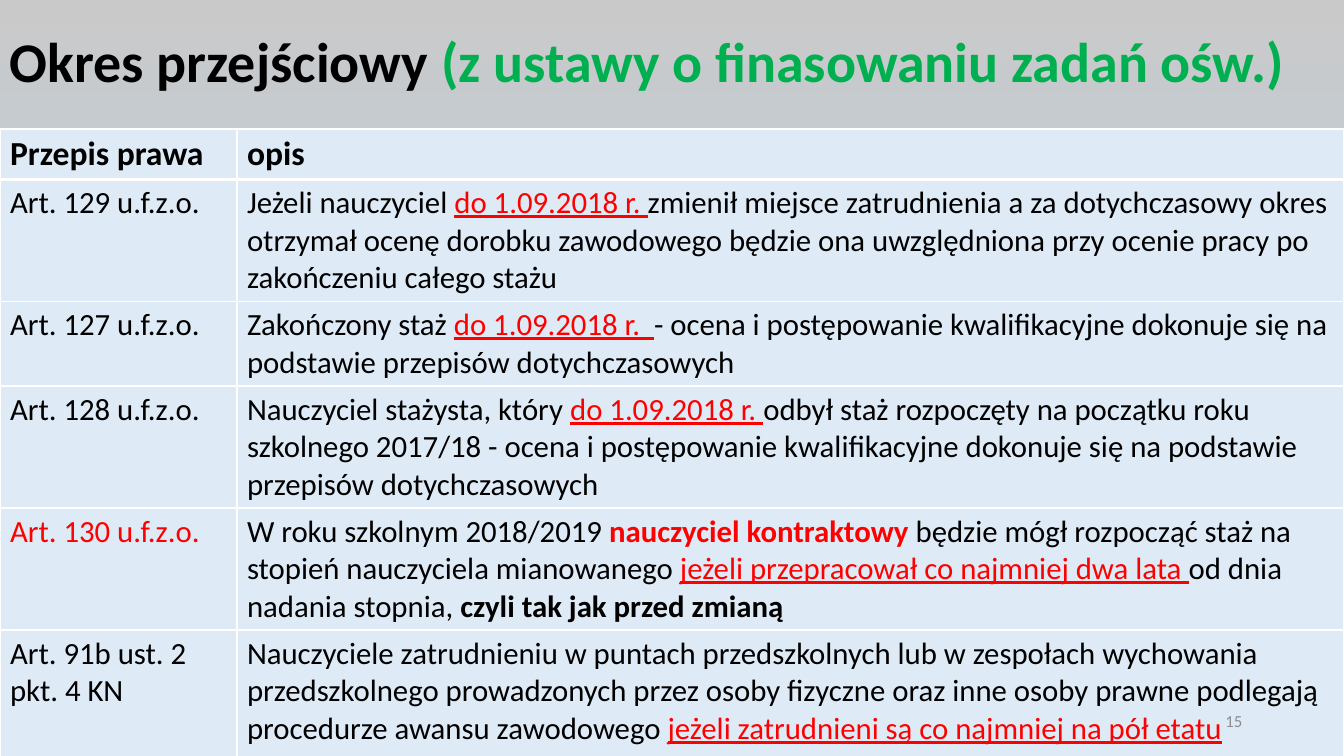
from lxml.etree import SubElement
from pptx import Presentation
from pptx.dml.color import RGBColor
from pptx.enum.text import MSO_ANCHOR, PP_ALIGN
from pptx.oxml.ns import qn
from pptx.util import Inches, Pt

BLACK = RGBColor(0x00, 0x00, 0x00)
WHITE = RGBColor(0xFF, 0xFF, 0xFF)
RED = RGBColor(0xFF, 0x00, 0x00)
GREEN = RGBColor(0x00, 0xB0, 0x50)
GRAY = RGBColor(0x8C, 0x8C, 0x8C)
PALE_BLUE = RGBColor(0xDE, 0xEB, 0xF7)
BACKGROUND_STOPS = [
    (0, RGBColor(0xC9, 0xC9, 0xC9)),
    (74, RGBColor(0xB5, 0xD2, 0xEC)),
    (83, RGBColor(0xB5, 0xD2, 0xEC)),
    (100, RGBColor(0xCE, 0xE1, 0xF2)),
]

FONT = "Calibri"
SLIDE_WIDTH, SLIDE_HEIGHT = 13.33, 7.5
TITLE_HEIGHT = 1.28
COLUMN_WIDTHS = [2.35, 10.98]
ROW_HEIGHTS = [0.5, 1.21, 0.84, 1.21, 1.21, 1.46]

DEADLINE = {"color": RED, "underline": True}
HEADER = ["Przepis prawa", "opis"]
PROVISIONS = [
    (
        [("Art. 129 u.f.z.o.", {})],
        [
            ("Jeżeli nauczyciel ", {}),
            ("do 1.09.2018 r. ", DEADLINE),
            ("zmienił miejsce zatrudnienia a za dotychczasowy okres otrzymał ocenę dorobku "
             "zawodowego będzie ona uwzględniona przy ocenie pracy po zakończeniu całego stażu", {}),
        ],
    ),
    (
        [("Art. 127 u.f.z.o.", {})],
        [
            ("Zakończony staż ", {}),
            ("do 1.09.2018 r.  ", DEADLINE),
            ("- ocena i postępowanie kwalifikacyjne dokonuje się na podstawie przepisów "
             "dotychczasowych", {}),
        ],
    ),
    (
        [("Art. 128 u.f.z.o.", {})],
        [
            ("Nauczyciel stażysta, który ", {}),
            ("do 1.09.2018 r. ", DEADLINE),
            ("odbył staż rozpoczęty na początku roku szkolnego 2017/18 - ocena i postępowanie "
             "kwalifikacyjne dokonuje się na podstawie przepisów dotychczasowych", {}),
        ],
    ),
    (
        [("Art. 130 u.f.z.o.", {"color": RED})],
        [
            ("W roku szkolnym 2018/2019 ", {}),
            ("nauczyciel kontraktowy ", {"color": RED, "bold": True}),
            ("będzie mógł rozpocząć staż na stopień nauczyciela mianowanego ", {}),
            ("jeżeli przepracował co najmniej dwa lata ", DEADLINE),
            ("od dnia nadania stopnia, ", {}),
            ("czyli tak jak przed zmianą", {"bold": True}),
        ],
    ),
    (
        [("Art. 91b ust. 2 pkt. 4 KN", {})],
        [
            ("Nauczyciele zatrudnieniu w puntach przedszkolnych lub w zespołach wychowania "
             "przedszkolnego prowadzonych przez osoby fizyczne oraz inne osoby prawne podlegają "
             "procedurze awansu zawodowego ", {}),
            ("jeżeli zatrudnieni są co najmniej na pół etatu", DEADLINE),
        ],
    ),
]


def add_run(paragraph, text, size=22, color=BLACK, bold=False, underline=False):
    run = paragraph.add_run()
    run.text = text
    font = run.font
    font.name = FONT
    font.size = Pt(size)
    font.bold = bold
    font.underline = underline
    font.color.rgb = color


def set_background(slide):
    fill = slide.background.fill
    fill.gradient()
    fill.gradient_angle = 270
    stop_list = next(slide.element.iter(qn("a:gsLst")))
    for stop in list(stop_list):
        stop_list.remove(stop)
    for position, color in BACKGROUND_STOPS:
        stop = SubElement(stop_list, qn("a:gs"), pos=str(position * 1000))
        SubElement(stop, qn("a:srgbClr"), val=str(color))


def add_text_box(slide, left, top, width, height, anchor=MSO_ANCHOR.MIDDLE):
    box = slide.shapes.add_textbox(Inches(left), Inches(top), Inches(width), Inches(height))
    frame = box.text_frame
    frame.word_wrap = True
    frame.vertical_anchor = anchor
    return frame.paragraphs[0]


def add_title(slide):
    paragraph = add_text_box(slide, 0, 0, SLIDE_WIDTH, TITLE_HEIGHT)
    paragraph.line_spacing = 0.9
    add_run(paragraph, "Okres przejściowy ", size=40, bold=True)
    add_run(paragraph, "(z ustawy o finasowaniu zadań ośw.)", size=40, bold=True, color=GREEN)


def add_slide_number(slide):
    paragraph = add_text_box(slide, 9.42, 6.95, 3, 0.4)
    paragraph.alignment = PP_ALIGN.RIGHT
    add_run(paragraph, "15", size=12, color=GRAY)


def style_cell(cell, top_width, bottom_width):
    properties = cell._tc.get_or_add_tcPr()
    widths = {"a:lnL": 1, "a:lnR": 1, "a:lnT": top_width, "a:lnB": bottom_width}
    for tag, width in widths.items():
        line = SubElement(properties, qn(tag), w=str(Pt(width)))
        fill = SubElement(line, qn("a:solidFill"))
        SubElement(fill, qn("a:srgbClr"), val=str(WHITE))
    cell.fill.solid()
    cell.fill.fore_color.rgb = PALE_BLUE


def add_provisions_table(slide):
    header = [[(label, {"size": 24, "bold": True})] for label in HEADER]
    rows = [header, *PROVISIONS]
    table = slide.shapes.add_table(
        len(rows), len(COLUMN_WIDTHS), Inches(0), Inches(TITLE_HEIGHT),
        Inches(SLIDE_WIDTH), Inches(sum(ROW_HEIGHTS)),
    ).table
    for column, width in zip(table.columns, COLUMN_WIDTHS):
        column.width = Inches(width)
    for row_index, (contents, height) in enumerate(zip(rows, ROW_HEIGHTS)):
        table.rows[row_index].height = Inches(height)
        for column_index, runs in enumerate(contents):
            cell = table.cell(row_index, column_index)
            style_cell(cell, 3 if row_index == 1 else 1, 3 if row_index == 0 else 1)
            for text, text_format in runs:
                add_run(cell.text_frame.paragraphs[0], text, **text_format)


def main():
    presentation = Presentation()
    presentation.slide_width = Inches(SLIDE_WIDTH)
    presentation.slide_height = Inches(SLIDE_HEIGHT)
    slide = presentation.slides.add_slide(presentation.slide_layouts[6])
    set_background(slide)
    add_title(slide)
    add_provisions_table(slide)
    add_slide_number(slide)
    presentation.save("out.pptx")


if __name__ == "__main__":
    main()
